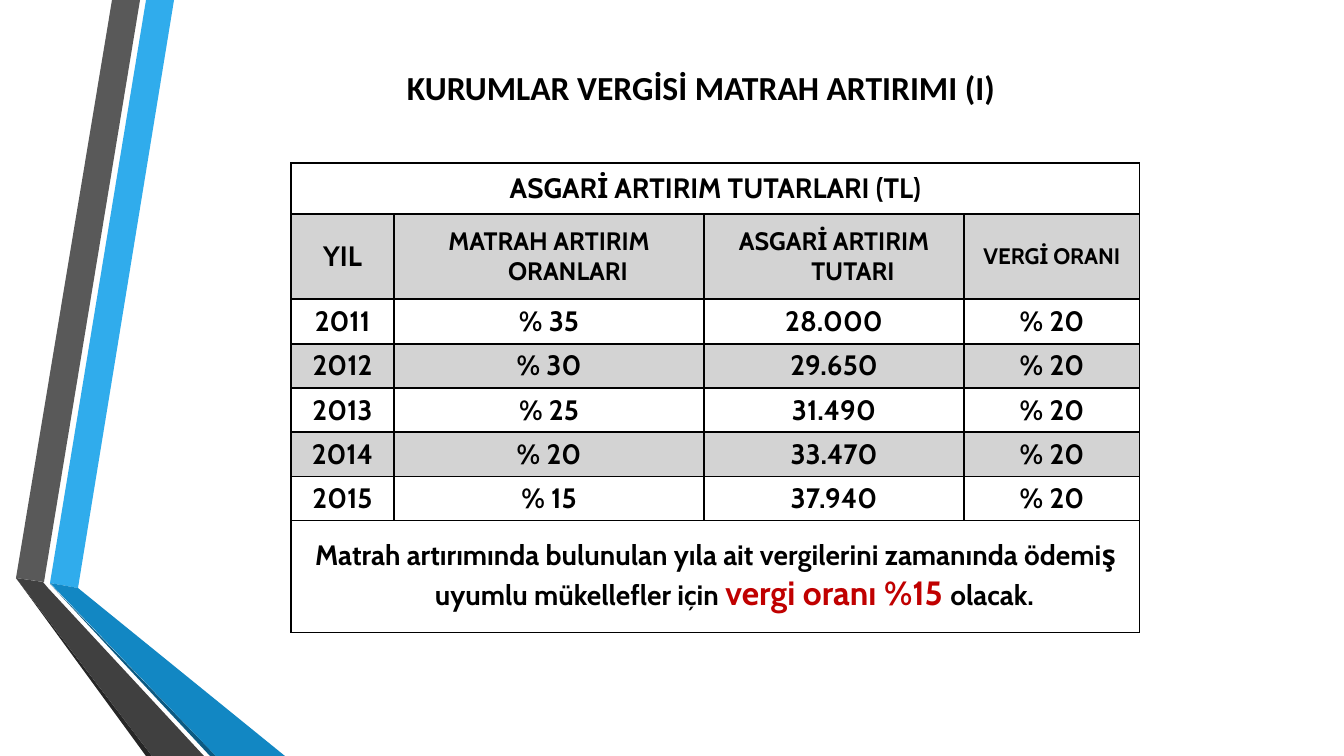
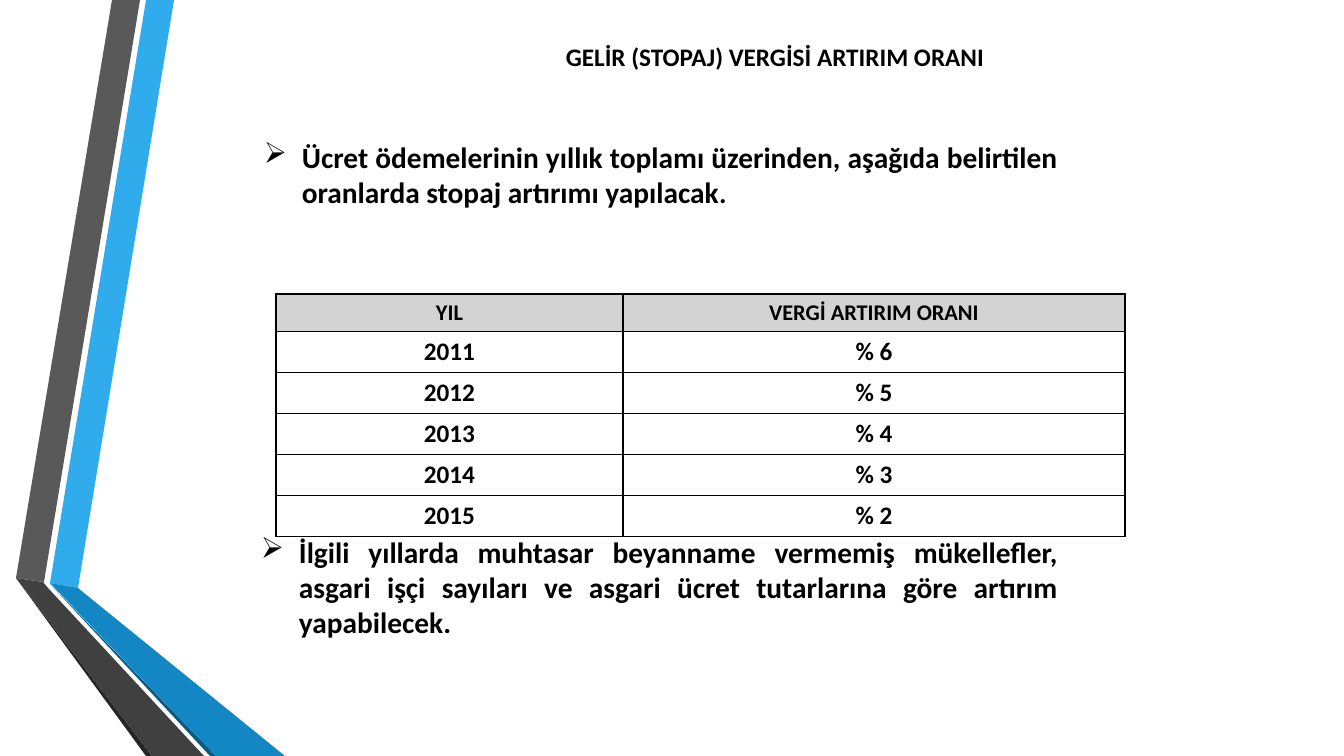
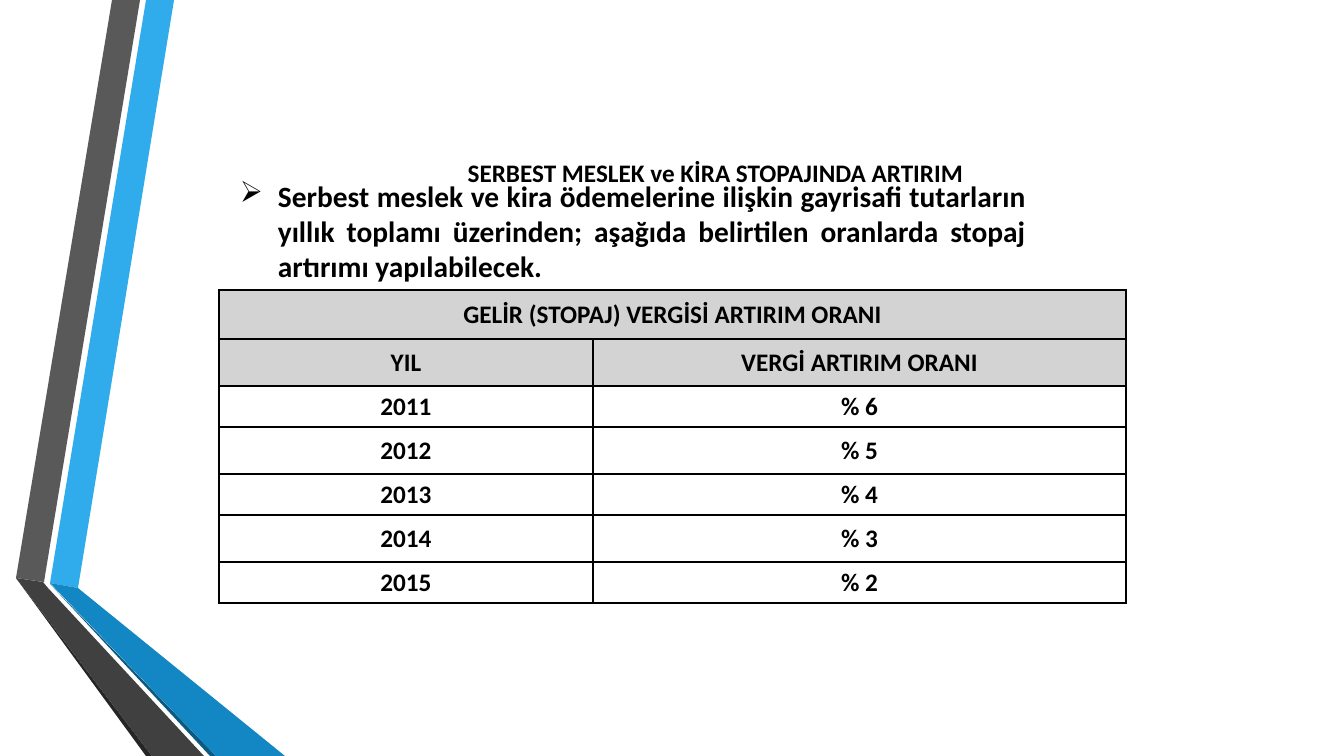
from lxml import etree
from pptx import Presentation
from pptx import util as u
from pptx.dml import color
from pptx.enum import text
from pptx.oxml import ns

SCALE = 914400 / 100.8
HANG = 38
HUES = {
    "ink": "000000", "red": "C00000", "shade": "D3D3D3",
    "sky": "30ACEC", "gray": "595959", "coal": "262626",
    "navy": "0C5A82", "blue": "1287C3", "slate": "404040",
}
BANDS = [
    ("sky", [(50, 583), (78, 588), (174, 0), (146, 0)]),
    ("gray", [(140, 0), (112, 0), (16, 578), (44, 582)]),
    ("coal", [(16, 578), (146, 756), (152, 756)]),
    ("navy", [(50, 584), (210, 756), (216, 756)]),
    ("blue", [(50, 583), (216, 756), (285, 756), (78, 588)]),
    ("slate", [(204, 756), (48, 588), (43, 582), (16, 578), (152, 756)]),
]
YEARS = range(2011, 2016)
RATES = [[str(year), f"% {rate}"] for year, rate in zip(YEARS, range(6, 1, -1))]
HEADS = ["YIL", "VERGİ ARTIRIM ORANI"]


def px(size):
    return u.Emu(round(size * SCALE))


def hue(name):
    return color.RGBColor.from_string(HUES[name])


def style(font, size, name="ink", face="Calibri"):
    font.size = u.Pt(size)
    font.bold = True
    font.name = face
    font.color.rgb = hue(name)


def write(frame, words, size, face="Calibri", align=text.PP_ALIGN.CENTER):
    para = frame.paragraphs[0]
    para.alignment = align
    style(para.font, size, face=face)
    parts = [(words,)] if isinstance(words, str) else words
    for part, *look in parts:
        run = para.add_run()
        run.text = part
        if look:
            style(run.font, *look, face=face)
    return para


def hang(para):
    props = para._p.get_or_add_pPr()
    props.set("marL", str(px(HANG)))
    props.set("indent", str(-px(HANG)))
    return props


def place(shape, box):
    shape.left, shape.top, shape.width, shape.height = map(px, box)


def add_page(deck, title, size, box):
    slide = deck.slides.add_slide(deck.slide_layouts[5])
    head = slide.shapes.title
    place(head, box)
    frame = head.text_frame
    frame.word_wrap = True
    frame.auto_size = text.MSO_AUTO_SIZE.NONE
    frame.vertical_anchor = text.MSO_ANCHOR.MIDDLE
    write(frame, title, size)
    return slide


def add_point(slide, words, box):
    frame = slide.shapes.add_textbox(*map(px, box)).text_frame
    frame.word_wrap = True
    props = hang(write(frame, words, 21, align=text.PP_ALIGN.JUSTIFY))
    mark = etree.Element(ns.qn("a:buChar"), char="➢")
    props.insert_element_before(mark, "a:tabLst", "a:defRPr", "a:extLst")


def edge(cell):
    props = cell._tc.get_or_add_tcPr()
    for side in "LRTB":
        line = etree.SubElement(props, ns.qn(f"a:ln{side}"), w=str(u.Pt(1)))
        fill = etree.SubElement(line, ns.qn("a:solidFill"))
        etree.SubElement(fill, ns.qn("a:srgbClr"), val=HUES["ink"])


def add_grid(slide, spot, cols, rows, data, shaded, sizes, pad=11, face="Calibri"):
    box = map(px, (*spot, sum(cols), sum(rows)))
    grid = slide.shapes.add_table(len(rows), len(cols), *box).table
    for col, width in zip(grid.columns, cols):
        col.width = px(width)
    for row, height in zip(grid.rows, rows):
        row.height = px(height)
    for y, line in enumerate(data):
        for x in range(len(cols)):
            cell = grid.cell(y, x)
            edge(cell)
            if y in shaded:
                cell.fill.solid()
                cell.fill.fore_color.rgb = hue("shade")
            else:
                cell.fill.background()
            cell.vertical_anchor = text.MSO_ANCHOR.MIDDLE
            cell.margin_left = cell.margin_right = px(pad)
            cell.margin_top = cell.margin_bottom = px(5)
            if x < len(line):
                size = sizes.get((y, x), sizes["body"])
                hang(write(cell.text_frame, line[x], size, face))
        if len(line) == 1:
            grid.cell(y, 0).merge(grid.cell(y, len(cols) - 1))


def add_bands(deck, slide):
    tree = deck.slide_master.shapes.element
    for spot, (name, points) in enumerate(BANDS, 2):
        pen = slide.shapes.build_freeform(*points[0], scale=SCALE)
        pen.add_line_segments(points[1:], close=True)
        band = pen.convert_to_shape()
        band.shadow.inherit = False
        band.fill.solid()
        band.fill.fore_color.rgb = hue(name)
        band.line.fill.background()
        tree.insert(spot, band.element)


def add_base(deck):
    slide = add_page(deck, "KURUMLAR VERGİSİ MATRAH ARTIRIMI (I)", 24, (276, 50, 850, 74))
    sums = ["28.000", "29.650", "31.490", "33.470", "37.940"]
    data = [
        ["ASGARİ ARTIRIM TUTARLARI (TL)"],
        ["YIL", "MATRAH ARTIRIM ORANLARI", "ASGARİ ARTIRIM TUTARI", "VERGİ ORANI"],
        *([str(year), f"% {rate}", total, "% 20"]
          for year, rate, total in zip(YEARS, range(35, 10, -5), sums)),
        [[("Matrah artırımında bulunulan yıla ait vergilerini zamanında ödemiş "
           "uyumlu mükellefler için ",),
          ("vergi oranı %15 ", 24, "red"), ("olacak.",)]],
    ]
    add_grid(slide, (291, 163), [103, 310, 260, 176], [51, 85, 45] + [44] * 4 + [112],
             data, {1, 3, 5}, {"body": 20, (1, 1): 18, (1, 2): 18, (1, 3): 16},
             10, "Cabin")
    return slide


def add_wage(deck):
    slide = add_page(deck, "GELİR (STOPAJ) VERGİSİ ARTIRIM ORANI", 18, (466, 36, 618, 40))
    add_grid(slide, (276, 294), [347, 502], [37] + [41] * 5, [HEADS] + RATES,
             {0}, {"body": 18, (0, 0): 16, (0, 1): 16})
    add_point(slide, [("Ücret ödemelerinin yıllık toplamı üzerinden, aşağıda belirtilen "
                       "oranlarda stopaj artırımı yapılacak",), (".", 20)],
              (254, 134, 814, 82))
    add_point(slide, "İlgili yıllarda muhtasar beyanname vermemiş mükellefler, asgari işçi "
              "sayıları ve asgari ücret tutarlarına göre artırım yapabilecek.",
              (251, 529, 817, 117))


def add_rent(deck):
    slide = add_page(deck, "SERBEST MESLEK ve KİRA STOPAJINDA ARTIRIM", 18,
                     (163, 76, 1105, 193))
    add_grid(slide, (219, 290), [374, 533], [49, 47, 41, 47, 41, 47, 41],
             [["GELİR (STOPAJ) VERGİSİ ARTIRIM ORANI"], HEADS] + RATES,
             {0, 1}, {"body": 18})
    add_point(slide, "Serbest meslek ve kira ödemelerine ilişkin gayrisafi tutarların yıllık "
              "toplamı üzerinden; aşağıda belirtilen oranlarda stopaj artırımı yapılabilecek.",
              (230, 173, 806, 118))


def main():
    deck = Presentation()
    deck.slide_width, deck.slide_height = px(1344), px(756)
    add_bands(deck, add_base(deck))
    add_wage(deck)
    add_rent(deck)
    deck.save("out.pptx")


if __name__ == "__main__":
    main()
